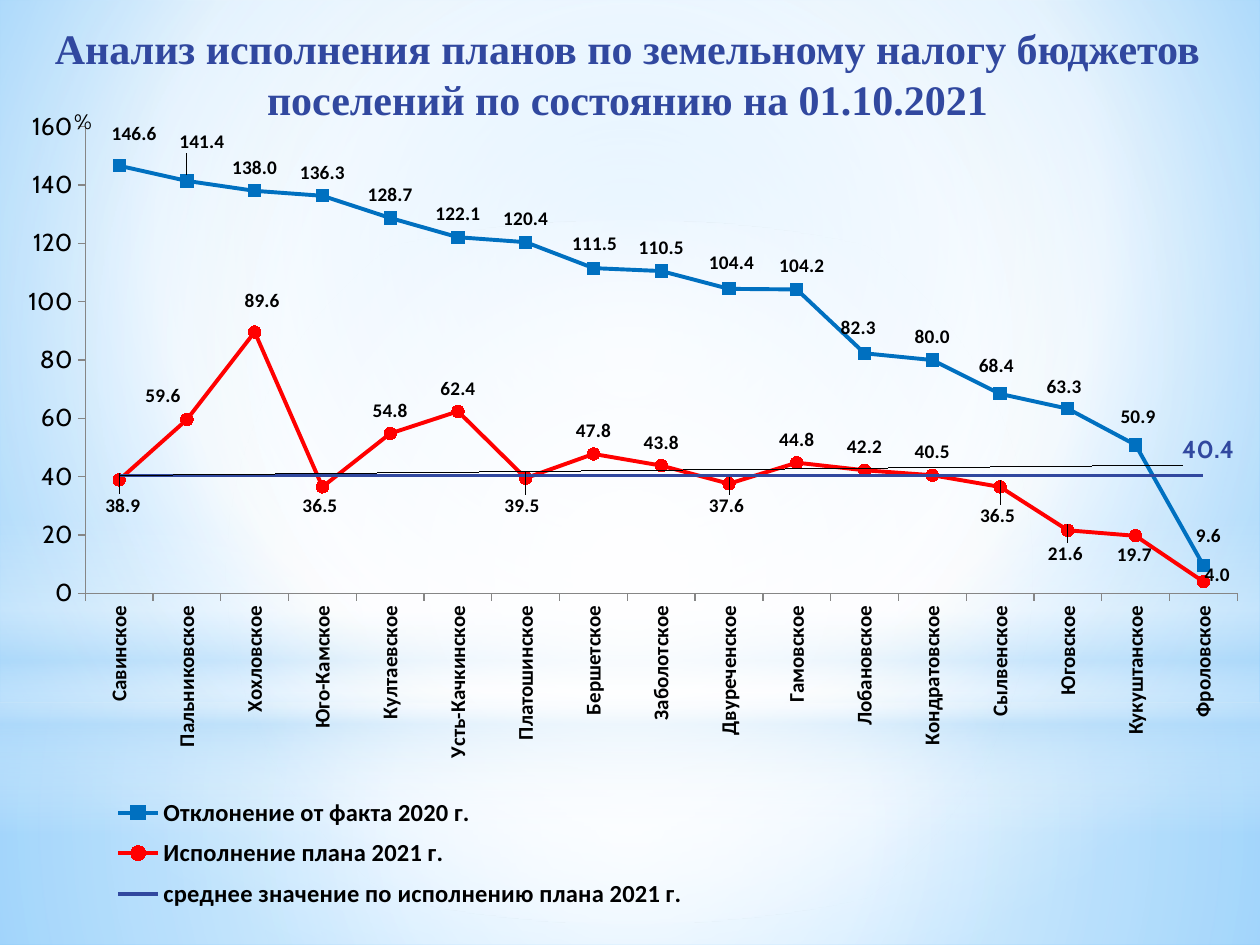
from dataclasses import dataclass

from lxml import etree
from pptx import Presentation
from pptx import util as u
from pptx.chart import data as chart_data
from pptx.dml import color
from pptx.enum import chart as charts, shapes, text
from pptx.oxml import parse_xml
from pptx.oxml import ns


@dataclass(frozen=True)
class Theme:
    sky: str = "9ED5FF"
    deep_sky: str = "5BB9FF"
    white: str = "FFFFFF"
    mist: str = "B4DCFA"
    navy: str = "31489F"
    blue: str = "0070C0"
    red: str = "FF0000"
    black: str = "000000"
    axis: str = "868686"
    title: int = 24
    large: int = 14
    axis_text: int = 12
    label: int = 11
    serif: str = "Times New Roman"
    sans: str = "Calibri"
    body: str = "Cabin"


theme = Theme()


def format_text(font, frame=None, content=None, size=12, name=theme.body, ink=theme.black, bold=False):
    if frame is not None:
        paragraph = frame.paragraphs[0]
        paragraph.alignment = text.PP_ALIGN.CENTER
        run = paragraph.add_run()
        run.text = content
        font = run.font
    font.size, font.name, font.bold = u.Pt(size), name, bold
    font.color.rgb = color.RGBColor.from_string(ink)


def set_layout(parent, index, modes=(), **fractions):
    for old in parent.findall(ns.qn("c:layout")):
        parent.remove(old)
    layout = etree.Element(ns.qn("c:layout"))
    manual = etree.SubElement(layout, ns.qn("c:manualLayout"))
    for tag, value in [*modes, *fractions.items()]:
        etree.SubElement(manual, ns.qn("c:" + tag)).set("val", str(value))
    parent.insert(index, layout)


presentation = Presentation()
presentation.slide_width, presentation.slide_height = u.Cm(25.4), u.Cm(19.05)
slide = presentation.slides.add_slide(presentation.slide_layouts[5])

centre = '<a:path path="circle"><a:fillToRect l="50000" t="50000" r="50000" b="50000"/></a:path>'
high = '<a:path path="circle"><a:fillToRect l="20000" t="10000" r="20000" b="60000"/></a:path>'
down = '<a:lin ang="5400000" scaled="0"/>'
rectangle, oval = shapes.MSO_SHAPE.RECTANGLE, shapes.MSO_SHAPE.OVAL
white, mist = theme.white, theme.mist
layers = [
    (None, 0, 0, high, [(0, theme.sky, 100), (60, white, 100), (100, theme.deep_sky, 100)]),
    (rectangle, 14.17, 4.88, centre, [(0, white, 91), (37, white, 76), (100, mist, 79)]),
    (rectangle, 0, 14.17, centre, [(0, white, 89), (48, white, 62), (100, mist, 79)]),
    (rectangle, 10.46, 6.35, down, [(0, white, 0), (29, white, 30), (45, mist, 40),
                                    (55, white, 26), (65, mist, 60), (100, white, 0)]),
    (oval, 4.45, 14.17, centre, [(0, white, 100), (56, white, 0)]),
]
for kind, top, height, direction, stops in layers:
    if kind is None:
        slide.background.fill.gradient()
        holder = slide._element.xpath(".//p:bgPr")[0]
    else:
        shape = slide.shapes.add_shape(kind, 0, u.Cm(top), u.Cm(25.4), u.Cm(height))
        shape.shadow.inherit = False
        shape.line.fill.background()
        shape.fill.gradient()
        holder = shape._element.spPr
    stop_xml = "".join(
        f'<a:gs pos="{position * 1000}"><a:srgbClr val="{tint}"><a:alpha val="{alpha * 1000}"/></a:srgbClr></a:gs>'
        for position, tint, alpha in stops)
    gradient = parse_xml(f'<a:gradFill {ns.nsdecls("a")} rotWithShape="1"><a:gsLst>{stop_xml}</a:gsLst>'
                         f'{direction}</a:gradFill>')
    holder.replace(holder.find(ns.qn("a:gradFill")), gradient)

title = slide.shapes.title
slide.shapes._spTree.append(title._element)
title.left, title.top, title.width, title.height = 0, u.Cm(0.33), u.Cm(25.3), u.Cm(1.6)
title.text_frame.word_wrap = True
title.text_frame.auto_size = text.MSO_AUTO_SIZE.NONE
title.text_frame.vertical_anchor = text.MSO_ANCHOR.TOP
format_text(None, title.text_frame,
            "Анализ исполнения планов по земельному налогу бюджетов поселений по состоянию на 01.10.2021",
            size=theme.title, name=theme.serif, ink=theme.navy, bold=True)

settlements = ["Савинское", "Пальниковское", "Хохловское", "Юго-Камское", "Култаевское", "Усть-Качкинское",
               "Платошинское", "Бершетское", "Заболотское", "Двуреченское", "Гамовское", "Лобановское",
               "Кондратовское", "Сылвенское", "Юговское", "Кукуштанское", "Фроловское"]
deviation = [146.6, 141.4, 138, 136.3, 128.7, 122.1, 120.4, 111.5, 110.5,
             104.4, 104.2, 82.3, 80, 68.4, 63.3, 50.9, 9.6]
execution = [38.9, 59.6, 89.6, 36.5, 54.8, 62.4, 39.5, 47.8, 43.8,
             37.6, 44.8, 42.2, 40.5, 36.5, 21.6, 19.7, 4]
numbers = chart_data.CategoryChartData()
numbers.categories = settlements
numbers.add_series("Отклонение от факта 2020 г.", deviation)
numbers.add_series("Исполнение плана 2021 г.", execution)
numbers.add_series("среднее значение по исполнению плана 2021 г.", [40.4] * len(settlements))
chart = slide.shapes.add_chart(charts.XL_CHART_TYPE.LINE_MARKERS, u.Cm(0.1), u.Cm(1.85),
                               u.Cm(25.3), u.Cm(17.2), numbers).chart
format_text(chart.font, size=18)
chart.has_title = False
edges = [("xMode", "edge"), ("yMode", "edge")]
set_layout(chart._chartSpace.chart.plotArea, 0, [("layoutTarget", "inner"), *edges],
           x=0.064, y=0.041, w=0.918, h=0.547)

chart.has_legend = True
legend = chart.legend
legend.position = charts.XL_LEGEND_POSITION.BOTTOM
legend.include_in_layout = False
format_text(legend.font, size=theme.large, name=theme.sans, bold=True)
set_layout(legend._element, 1, edges, x=0.08, y=0.815, w=0.47, h=0.155)

values, categories = chart.value_axis, chart.category_axis
values.minimum_scale, values.maximum_scale, values.major_unit = 0, 160, 20
values.has_major_gridlines = False
values.tick_labels.number_format = "#,##0"
values.tick_labels.number_format_is_linked = False
format_text(values.tick_labels.font, size=theme.large)
format_text(categories.tick_labels.font, size=theme.axis_text, name=theme.sans, bold=True)
categories._element.find(ns.qn("c:txPr")).find(ns.qn("a:bodyPr")).set("rot", "-5400000")
for axis in (values, categories):
    axis.major_tick_mark = charts.XL_TICK_MARK.OUTSIDE
    axis.format.line.color.rgb = color.RGBColor.from_string(theme.axis)
    axis.format.line.width = u.Pt(0.75)

values.has_title = True
heading = values.axis_title
format_text(None, heading.text_frame, "%", size=theme.axis_text)
heading.text_frame._txBody.bodyPr.set("rot", "0")
heading.text_frame._txBody.bodyPr.set("vert", "horz")
set_layout(heading._element, 1, edges, x=0.052, y=0.014)

above, right = charts.XL_LABEL_POSITION.ABOVE, charts.XL_LABEL_POSITION.RIGHT
small = dict(size=theme.label, name=theme.sans, bold=True)
large = dict(size=theme.large, ink=theme.navy, bold=True)
styles = [
    (theme.blue, charts.XL_MARKER_STYLE.SQUARE, above, small,
     {0: (12, -10), 1: (12, -19), 7: (1, -1), 9: (2, -3), 10: (4, -1), 11: (-5, -3),
      13: (-3, -6), 14: (-3, 1), 15: (2, -6), 16: (4, -8)}),
    (theme.red, charts.XL_MARKER_STYLE.CIRCLE, above, small,
     {0: (3, 57), 1: (-19, -1), 2: (6, -10), 3: (-2, 49), 6: (-3, 60), 9: (-2, 53),
      13: (-2, 61), 14: (-2, 55), 15: (-1, 49), 16: (11, 19)}),
    (theme.navy, charts.XL_MARKER_STYLE.NONE, right, large, {0: (843, -30)}),
]
for series, (ink, marker, position, style, offsets) in zip(chart.plots[0].series, styles):
    rgb = color.RGBColor.from_string(ink)
    series.smooth = False
    series.format.line.color.rgb = rgb
    series.format.line.width = u.Pt(2.25)
    series.marker.style = marker
    if marker != charts.XL_MARKER_STYLE.NONE:
        series.marker.size = 7
        series.marker.format.fill.solid()
        series.marker.format.fill.fore_color.rgb = rgb
        series.marker.format.line.color.rgb = rgb
    labels = series.data_labels
    labels.show_value = position == above
    labels.position = position
    labels.number_format, labels.number_format_is_linked = "#,##0.0", False
    format_text(labels.font, **style)
    for index, (across, along) in offsets.items():
        label = series.points[index].data_label
        format_text(label.font, **style)
        label.position = position
        element = labels._element.findall(ns.qn("c:dLbl"))[-1]
        set_layout(element, 1, x=across / 1000, y=along / 1000)
        element.insert(2, parse_xml(f'<c:numFmt {ns.nsdecls("c")} formatCode="#,##0.0" sourceLinked="0"/>'))

presentation.save("out.pptx")
